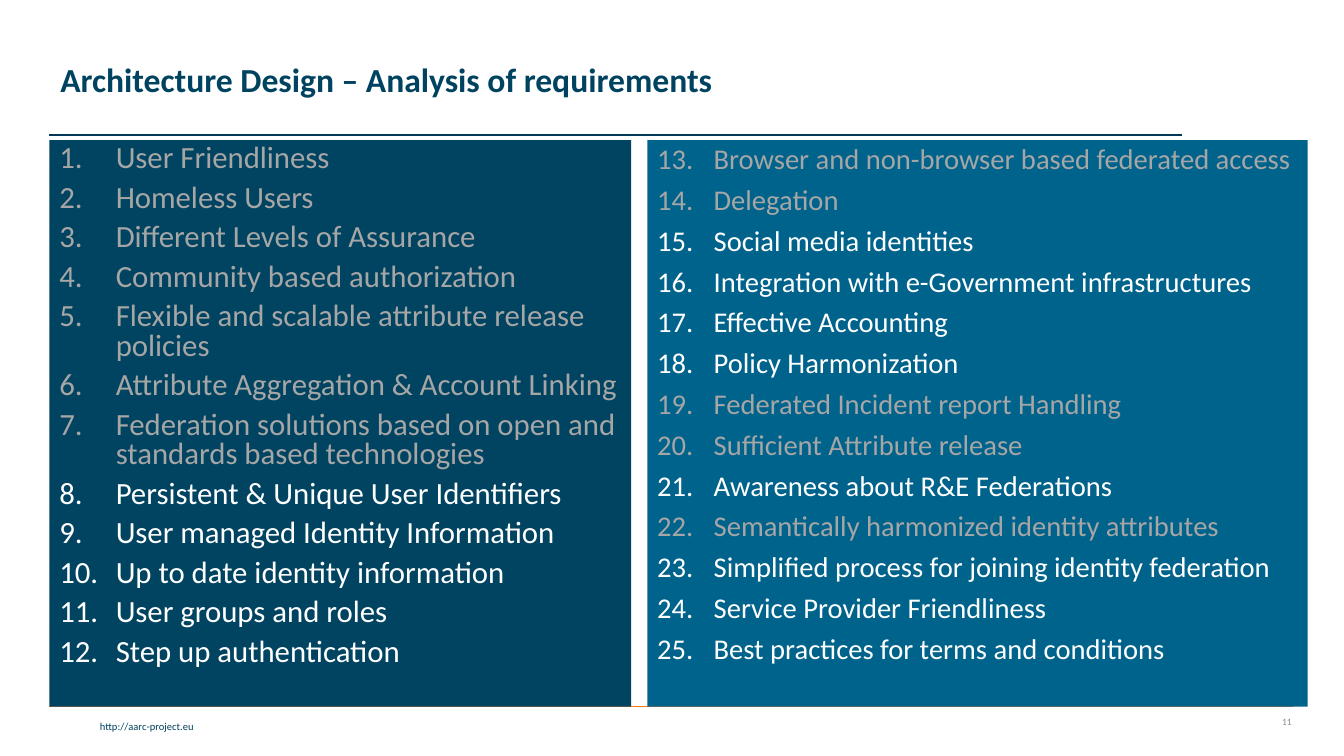
"""Build the slide that lists the analysed architecture requirements."""
from dataclasses import dataclass

from lxml import etree
from pptx import Presentation
from pptx import util as u
from pptx.dml.color import RGBColor
from pptx.enum import shapes, text
from pptx.oxml.ns import qn

COLORS = {
    "title": "004361", "footer": "003F5E", "number": "8C8C8C",
    "title_rule": "003959", "footer_rule": "F57B20",
    "left": "004461", "right": "00638C", "done": "A6A6A6", "open": "FFFFFF",
}
INDENT = u.Inches(0.56)


@dataclass
class Panel:
    left: float
    width: float
    fill: str
    size: float
    line_spacing: float
    start: int
    items: list[str]


@dataclass
class Label:
    box: tuple[float, float, float, float]
    words: str
    size: float
    color: str
    bold: bool = False
    align: text.PP_ALIGN = text.PP_ALIGN.LEFT
    anchor: text.MSO_ANCHOR = text.MSO_ANCHOR.MIDDLE
    line_spacing: float = 1.0


@dataclass
class Rule:
    left: float
    right: float
    y: float
    color: str


DONE = {*range(1, 8), 13, 14, 19, 20, 22}

PANELS = [
    Panel(0.49, 5.77, "left", 22, 0.8, 1, [
        "User Friendliness",
        "Homeless Users",
        "Different Levels of Assurance",
        "Community based authorization",
        "Flexible and scalable attribute release policies",
        "Attribute Aggregation & Account Linking",
        "Federation solutions based on open and standards based technologies",
        "Persistent & Unique User Identifiers",
        "User managed Identity Information",
        "Up to date identity information",
        "User groups and roles",
        "Step up authentication",
    ]),
    Panel(6.42, 6.55, "right", 20.4, 0.9, 13, [
        "Browser and non-browser based federated access",
        "Delegation",
        "Social media identities",
        "Integration with e-Government infrastructures",
        "Effective Accounting",
        "Policy Harmonization",
        "Federated Incident report Handling",
        "Sufficient Attribute release",
        "Awareness about R&E Federations",
        "Semantically harmonized identity attributes",
        "Simplified process for joining identity federation",
        "Service Provider Friendliness",
        "Best practices for terms and conditions",
    ]),
]

LABELS = [
    Label((0.03, 7.09, 1.99, 0.23), "http://aarc-project.eu", 7.5, "footer",
          align=text.PP_ALIGN.RIGHT, anchor=text.MSO_ANCHOR.TOP),
    Label((12.1, 7.01, 0.81, 0.3), "11", 6.8, "number",
          align=text.PP_ALIGN.RIGHT),
    Label((0.5, 0.08, 10.51, 1.45),
          "Architecture Design – Analysis of requirements", 24, "title",
          bold=True, line_spacing=0.9),
]

RULES = [
    Rule(0.49, 12.82, 7.01, "footer_rule"),
    Rule(0.49, 11.72, 1.34, "title_rule"),
]


def rgb(name: str) -> RGBColor:
    """Look up a named colour."""
    return RGBColor.from_string(COLORS[name])


def write(p, words: str, *, size: float, color: str, bold: bool = False,
          align=text.PP_ALIGN.LEFT, line_spacing: float = 1.0,
          before: float = 0) -> None:
    """Fill a paragraph with one formatted run."""
    p.alignment = align
    p.line_spacing = line_spacing
    p.space_before = u.Pt(before)
    r = p.add_run()
    r.text = words
    r.font.name = "Calibri"
    r.font.size = u.Pt(size)
    r.font.bold = bold
    r.font.color.rgb = rgb(color)


def number(p, start: int) -> None:
    """Give a paragraph automatic numbering with a hanging indent."""
    props = p._p.get_or_add_pPr()
    props.set("marL", str(INDENT))
    props.set("indent", str(-INDENT))
    bullet = etree.SubElement(props, qn("a:buAutoNum"), type="arabicPeriod")
    if start > 1:
        bullet.set("startAt", str(start))


def draw_panel(s, panel: Panel) -> None:
    """Draw a filled panel with its numbered requirements."""
    sp = s.shapes.add_shape(
        shapes.MSO_SHAPE.RECTANGLE, u.Inches(panel.left), u.Inches(1.39),
        u.Inches(panel.width), u.Inches(5.62))
    sp.shadow.inherit = False
    sp.fill.solid()
    sp.fill.fore_color.rgb = rgb(panel.fill)
    sp.line.fill.background()
    tf = sp.text_frame
    tf.word_wrap = True
    tf.vertical_anchor = text.MSO_ANCHOR.TOP
    for i, item in enumerate(panel.items):
        p = tf.add_paragraph() if i else tf.paragraphs[0]
        number(p, panel.start)
        write(p, item, size=panel.size,
              color="done" if panel.start + i in DONE else "open",
              line_spacing=panel.line_spacing, before=7.1 if i else 0)


def draw_label(s, label: Label) -> None:
    """Draw a single-line text box."""
    sp = s.shapes.add_textbox(*(u.Inches(v) for v in label.box))
    tf = sp.text_frame
    tf.word_wrap = True
    tf.vertical_anchor = label.anchor
    write(tf.paragraphs[0], label.words, size=label.size, color=label.color,
          bold=label.bold, align=label.align, line_spacing=label.line_spacing)


def draw_rule(s, rule: Rule) -> None:
    """Draw a thin horizontal line."""
    y = u.Inches(rule.y)
    line = s.shapes.add_connector(
        shapes.MSO_CONNECTOR.STRAIGHT, u.Inches(rule.left), y,
        u.Inches(rule.right), y)
    line.line.color.rgb = rgb(rule.color)
    line.line.width = u.Pt(1)
    etree.SubElement(line._element.spPr, qn("a:effectLst"))


def main() -> None:
    """Assemble and save the presentation."""
    prs = Presentation()
    prs.slide_width = u.Inches(13.33)
    prs.slide_height = u.Inches(7.5)
    s = prs.slides.add_slide(prs.slide_layouts[6])
    for rule in RULES:
        draw_rule(s, rule)
    for panel in PANELS:
        draw_panel(s, panel)
    for label in LABELS:
        draw_label(s, label)
    prs.save("out.pptx")


if __name__ == "__main__":
    main()
